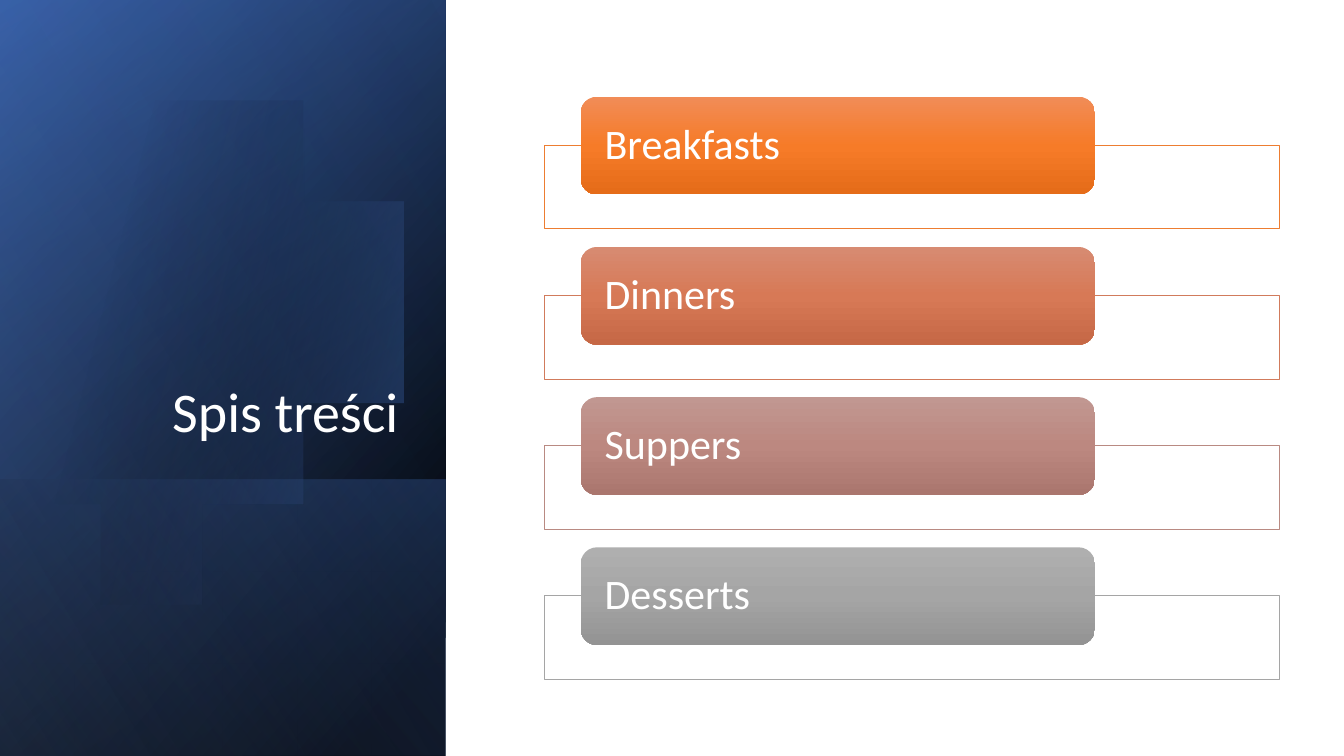
from lxml import etree
from pptx import Presentation
from pptx.dml.color import RGBColor
from pptx.enum.shapes import MSO_SHAPE
from pptx.enum.text import MSO_ANCHOR, PP_ALIGN
from pptx.oxml.ns import qn
from pptx.util import Inches, Pt

RECTANGLE, ROUNDED = MSO_SHAPE.RECTANGLE, MSO_SHAPE.ROUNDED_RECTANGLE
BOTTOM, MIDDLE = MSO_ANCHOR.BOTTOM, MSO_ANCHOR.MIDDLE
LEFT, RIGHT = PP_ALIGN.LEFT, PP_ALIGN.RIGHT
WHITE = RGBColor(0xFF, 0xFF, 0xFF)
FONT = "Calibri"

TITLE = "Spis treści"
# Label, outline colour, gradient colours from top to bottom
MEALS = [
    ("Breakfasts", RGBColor(0xED, 0x7D, 0x31), ("F18C57", "F67B28", "E56C19")),
    ("Dinners", RGBColor(0xD1, 0x7B, 0x5C), ("D78B72", "D77956", "C66846")),
    ("Suppers", RGBColor(0xB9, 0x8A, 0x82), ("C19791", "BC8880", "AA766E")),
    ("Desserts", RGBColor(0xA5, 0xA5, 0xA5), ("AFAFAF", "A5A5A5", "939393")),
]
ROW_TOP, ROW_PITCH = 0.96, 1.49

# Gradient stops: position %, colour, opacity %
PANEL = (-1.54, 1.54, 7.5, 4.42)
FOOT = (0.84, 3.92, 2.74, 4.42)
LAYERS_BELOW = [
    (PANEL, [(8, "000000", 100), (100, "2F5597", 100)], 50),
    (PANEL, [(0, "000000", 0), (99, "4472C4", 46)], 30),
    (FOOT, [(2, "4472C4", 29), (100, "000000", 30)], 130),
]
LAYER_ABOVE = (PANEL, [(0, "000000", 0), (99, "8FAADC", 11)], 120)

DISC_STOPS = [(29, "000000", 0), (100, "4472C4", 43)]
DISC_ANGLE = 14
DISC_START = (1.49, 1.1)
# Each segment: two control points and an end point, or one end point
DISC_SEGMENTS = [
    [(2.46, 1.12), (3.35, 1.77), (3.63, 2.75)],
    [(3.98, 3.97), (3.28, 5.23), (2.07, 5.58)],
    [(1.31, 5.8), (0.53, 5.61), (-0.03, 5.14)],
    [(-0.15, 5.03)],
    [(-0.15, 1.75)],
    [(0, 1.61)],
    [(0.23, 1.42), (0.5, 1.28), (0.8, 1.19)],
    [(1.03, 1.13), (1.26, 1.1), (1.49, 1.1)],
]
CURVE_STEPS = 20


def fill_gradient(shape, stops, angle):
    """Fill with a linear gradient whose stops may be see-through."""
    shape.fill.solid()
    properties = shape._element.spPr
    gradient = etree.Element(qn("a:gradFill"), rotWithShape="1")
    stop_list = etree.SubElement(gradient, qn("a:gsLst"))
    for position, colour, opacity in stops:
        stop = etree.SubElement(stop_list, qn("a:gs"), pos=str(position * 1000))
        value = etree.SubElement(stop, qn("a:srgbClr"), val=colour)
        if opacity < 100:
            etree.SubElement(value, qn("a:alpha"), val=str(opacity * 1000))
    etree.SubElement(gradient, qn("a:lin"), ang=str(angle * 60000), scaled="0")
    properties.replace(properties.find(qn("a:solidFill")), gradient)


def add_box(slide, kind, box):
    shape = slide.shapes.add_shape(kind, *map(Inches, box))
    shape.shadow.inherit = False
    shape.line.fill.background()
    return shape


def add_layer(slide, box, stops, angle):
    """Add a gradient sheet, mirrored and turned to stand upright."""
    shape = add_box(slide, RECTANGLE, box)
    shape._element.spPr.xfrm.set("flipH", "1")
    shape.rotation = 90
    fill_gradient(shape, stops, angle)


def curve_points(start, first, second, end):
    """Points along a cubic Bezier curve, without its start."""
    points = []
    for step in range(1, CURVE_STEPS + 1):
        t = step / CURVE_STEPS
        weights = ((1 - t) ** 3, 3 * t * (1 - t) ** 2, 3 * t * t * (1 - t), t ** 3)
        corners = (start, first, second, end)
        points.append(tuple(sum(w * c[axis] for w, c in zip(weights, corners))
                            for axis in (0, 1)))
    return points


def add_disc(slide):
    points = [DISC_START]
    for segment in DISC_SEGMENTS:
        points += curve_points(points[-1], *segment) if len(segment) == 3 else segment
    builder = slide.shapes.build_freeform(*DISC_START, scale=Inches(1))
    builder.add_line_segments(points[1:], close=True)
    disc = builder.convert_to_shape()
    disc.shadow.inherit = False
    disc.line.fill.background()
    fill_gradient(disc, DISC_STOPS, DISC_ANGLE)


def write_text(shape, text, size, alignment, anchor):
    frame = shape.text_frame
    frame.word_wrap = True
    frame.vertical_anchor = anchor
    paragraph = frame.paragraphs[0]
    paragraph.alignment = alignment
    paragraph.line_spacing = 0.9
    run = paragraph.add_run()
    run.text = text
    run.font.name = FONT
    run.font.size = Pt(size)
    run.font.color.rgb = WHITE


def add_meal(slide, top, label, outline, colours):
    frame = add_box(slide, RECTANGLE, (5.4, top + 0.48, 7.29, 0.83))
    frame.fill.solid()
    frame.fill.fore_color.rgb = WHITE
    frame.line.color.rgb = outline
    frame.line.width = Pt(0.5)

    tab = add_box(slide, ROUNDED, (5.76, top, 5.1, 0.97))
    fill_gradient(tab, [(p, c, 100) for p, c in zip((0, 50, 100), colours)], 90)
    write_text(tab, label, 30, LEFT, MIDDLE)
    tab.text_frame.margin_left = tab.text_frame.margin_right = Inches(0.19)
    tab.text_frame.margin_top = tab.text_frame.margin_bottom = 0


def main():
    presentation = Presentation()
    presentation.slide_width = Inches(13.33)
    presentation.slide_height = Inches(7.5)
    slide = presentation.slides.add_slide(presentation.slide_layouts[6])

    for layer in LAYERS_BELOW:
        add_layer(slide, *layer)
    add_disc(slide)
    add_layer(slide, *LAYER_ABOVE)

    title = slide.shapes.add_textbox(*map(Inches, (0.64, 1.84, 3.41, 2.62)))
    write_text(title, TITLE, 40, RIGHT, BOTTOM)

    for row, meal in enumerate(MEALS):
        add_meal(slide, ROW_TOP + row * ROW_PITCH, *meal)

    presentation.save("out.pptx")


if __name__ == "__main__":
    main()
